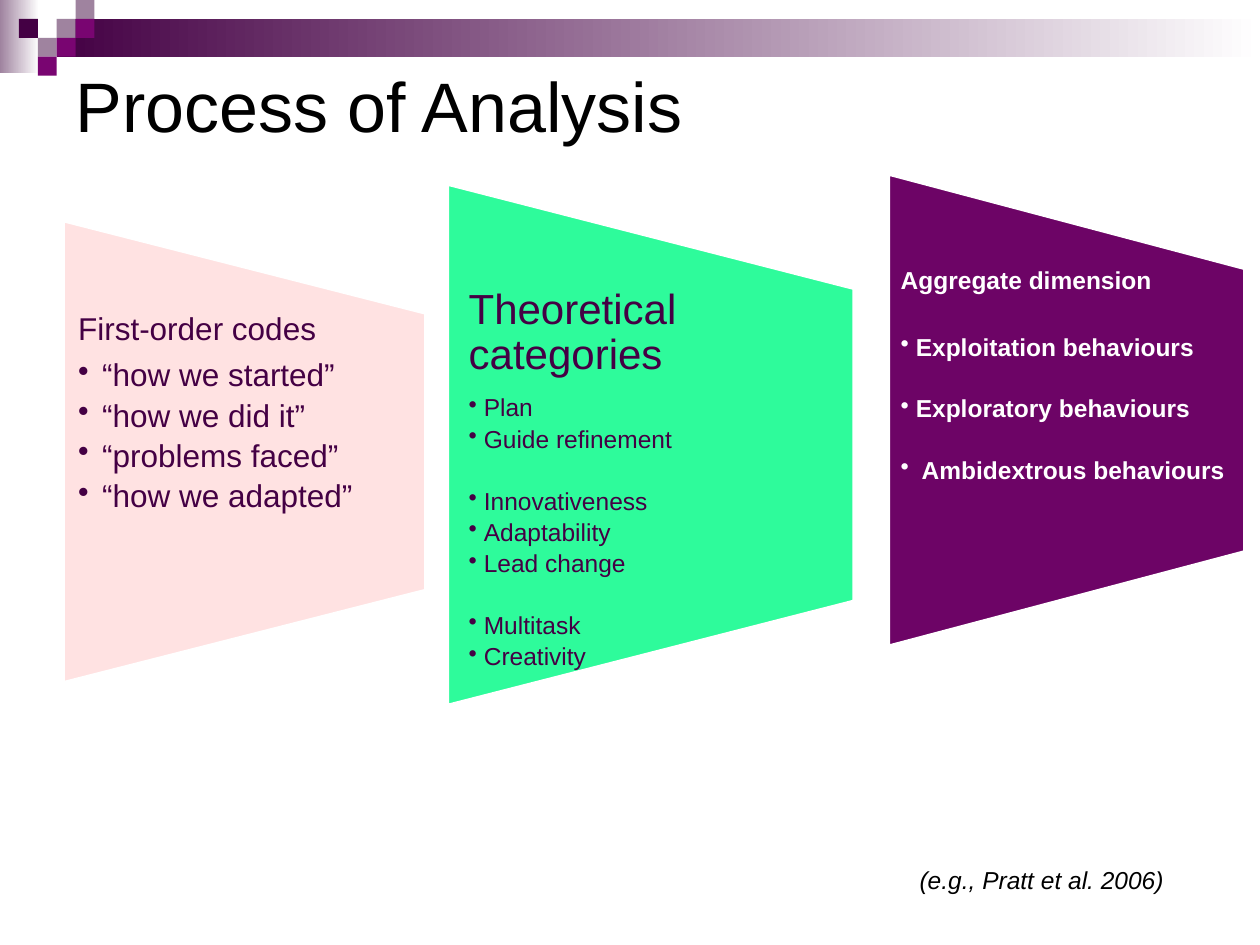
"""Build the "Process of Analysis" slide with three narrowing panels."""
import dataclasses

import pptx
import pptx.dml.color
import pptx.enum.shapes
import pptx.enum.text
import pptx.oxml
import pptx.oxml.ns
import pptx.util

Inches = pptx.util.Inches
Pt = pptx.util.Pt
MSO_SHAPE = pptx.enum.shapes.MSO_SHAPE


@dataclasses.dataclass(frozen=True)
class Theme:
    font: str = "Arial"
    black: str = "000000"
    white: str = "FFFFFF"
    dark: str = "440044"
    mauve: str = "9F839F"
    purple: str = "790571"
    pink: str = "FFE2E2"
    green: str = "2EFB9B"
    plum: str = "6D0466"
    title_size: int = 40
    large_size: int = 24
    medium_size: int = 18
    small_size: int = 14


@dataclasses.dataclass(frozen=True)
class Panel:
    box: tuple
    fill: str
    color: str
    heading: str
    heading_size: int
    item_size: int
    groups: tuple
    inset: float
    indent: float
    bold: bool = False


THEME = Theme()
SQUARE = 0.15
SQUARES = (
    (3, 1, THEME.mauve), (4, 0, THEME.mauve), (4, 1, THEME.purple),
    (2, 2, THEME.mauve), (1, 1, THEME.dark), (3, 2, THEME.purple),
    (2, 3, THEME.purple),
)
PANELS = (
    Panel((0.5, 1.75, 2.88, 3.67), THEME.pink, THEME.dark,
          "First-order codes", THEME.medium_size, THEME.medium_size,
          (("“how we started”", "“how we did it”",
            "“problems faced”", "“how we adapted”"),), 0.12, 0.19),
    Panel((3.55, 1.46, 3.23, 4.14), THEME.green, THEME.dark,
          "Theoretical categories", THEME.large_size, THEME.small_size,
          (("Plan", "Guide refinement"),
           ("Innovativeness", "Adaptability", "Lead change"),
           ("Multitask", "Creativity")), 0.17, 0.12),
    Panel((7.05, 1.38, 2.83, 3.75), THEME.plum, THEME.white,
          "Aggregate dimension", THEME.small_size, THEME.small_size,
          ((), ("Exploitation behaviours",), ("Exploratory behaviours",),
           (" Ambidextrous behaviours",)), 0.1, 0.12, True),
)


def rgb(color):
    """Return a colour object for a hex string."""
    return pptx.dml.color.RGBColor.from_string(color)


def format_runs(paragraph, size, color, bold=False, italic=False):
    """Apply one type style to every run of a paragraph."""
    for run in paragraph.runs:
        run.font.name = THEME.font
        run.font.size = Pt(size)
        run.font.color.rgb = rgb(color)
        run.font.bold = bold
        run.font.italic = italic


def add_block(slide, box, color, fade_to=None):
    """Add a plain rectangle, optionally fading to a second colour."""
    shape = slide.shapes.add_shape(MSO_SHAPE.RECTANGLE, *map(Inches, box))
    shape.shadow.inherit = False
    shape.line.fill.background()
    if fade_to is None:
        shape.fill.solid()
        shape.fill.fore_color.rgb = rgb(color)
        return
    shape.fill.gradient()
    shape.fill.gradient_angle = 0
    for stop, stop_color in zip(shape.fill.gradient_stops, (color, fade_to)):
        stop.color.rgb = rgb(stop_color)


def add_banner(slide):
    """Add the fading bars and the mosaic of squares."""
    add_block(slide, (0, 0, 0.31, 0.58), THEME.mauve, THEME.white)
    add_block(slide, (0.45, 0.15, 9.55, 0.3), THEME.dark, THEME.white)
    for column, row, color in SQUARES:
        add_block(slide, (column * SQUARE, row * SQUARE, SQUARE, SQUARE), color)


def add_title(slide, text):
    """Place and format the title placeholder."""
    title = slide.shapes.title
    title.left, title.top, title.width, title.height = map(
        Inches, (0.5, 0.5, 9, 0.66))
    text_frame = title.text_frame
    text_frame.text = text
    text_frame.auto_size = pptx.enum.text.MSO_AUTO_SIZE.NONE
    text_frame.vertical_anchor = pptx.enum.text.MSO_ANCHOR.MIDDLE
    paragraph = text_frame.paragraphs[0]
    paragraph.alignment = pptx.enum.text.PP_ALIGN.LEFT
    format_runs(paragraph, THEME.title_size, THEME.black)


def add_trapezoid(slide, panel):
    """Add a trapezoid that narrows to the right within the panel box."""
    left, top, width, height = panel.box
    shift = (height - width) / 2
    shape = slide.shapes.add_shape(
        MSO_SHAPE.FLOWCHART_MANUAL_OPERATION,
        *map(Inches, (left - shift, top + shift, height, width)))
    shape.rotation = 270
    shape.shadow.inherit = False
    shape.fill.solid()
    shape.fill.fore_color.rgb = rgb(panel.fill)
    shape.line.color.rgb = rgb(THEME.white)
    shape.line.width = Pt(2)


def add_item(text_frame, text, panel, opens_group):
    """Add one bulleted item, set apart when it opens a group."""
    paragraph = text_frame.add_paragraph()
    paragraph.text = text
    paragraph.line_spacing = 0.9
    paragraph.space_before = Pt(17.3 if opens_group else 0)
    paragraph.space_after = Pt(0.2 * panel.item_size)
    properties = paragraph._p.get_or_add_pPr()
    properties.set("marL", str(Inches(panel.indent)))
    properties.set("indent", str(-Inches(panel.indent)))
    bullet = pptx.oxml.parse_xml(
        f'<a:buChar {pptx.oxml.ns.nsdecls("a")} char="•"/>')
    properties.append(bullet)
    format_runs(paragraph, panel.item_size, panel.color, panel.bold)


def add_panel_text(slide, panel):
    """Add the heading and grouped items over the panel."""
    left, top, width, height = panel.box
    box = (left, top + 0.2 * height, width, 0.6 * height)
    text_frame = slide.shapes.add_textbox(*map(Inches, box)).text_frame
    text_frame.word_wrap = True
    text_frame.margin_left = text_frame.margin_right = Inches(panel.inset)
    text_frame.margin_top = text_frame.margin_bottom = 0
    text_frame.text = panel.heading
    heading = text_frame.paragraphs[0]
    heading.line_spacing = 0.9
    heading.space_after = Pt(0.4 * panel.heading_size)
    format_runs(heading, panel.heading_size, panel.color, panel.bold)
    for group_index, group in enumerate(panel.groups):
        for item_index, text in enumerate(group):
            add_item(text_frame, text, panel,
                     group_index > 0 and item_index == 0)


def add_citation(slide, text):
    """Add the italic citation at the lower right."""
    box = map(Inches, (7.2, 6.82, 2.21, 0.34))
    text_frame = slide.shapes.add_textbox(*box).text_frame
    text_frame.text = text
    format_runs(text_frame.paragraphs[0], THEME.small_size, THEME.black,
                italic=True)


def main():
    """Build and save the presentation."""
    presentation = pptx.Presentation()
    presentation.slide_width = Inches(10)
    presentation.slide_height = Inches(7.5)
    slide = presentation.slides.add_slide(presentation.slide_layouts[5])
    add_banner(slide)
    add_title(slide, "Process of Analysis")
    for panel in PANELS:
        add_trapezoid(slide, panel)
        add_panel_text(slide, panel)
    add_citation(slide, "(e.g., Pratt et al. 2006)")
    presentation.save("out.pptx")


if __name__ == "__main__":
    main()
